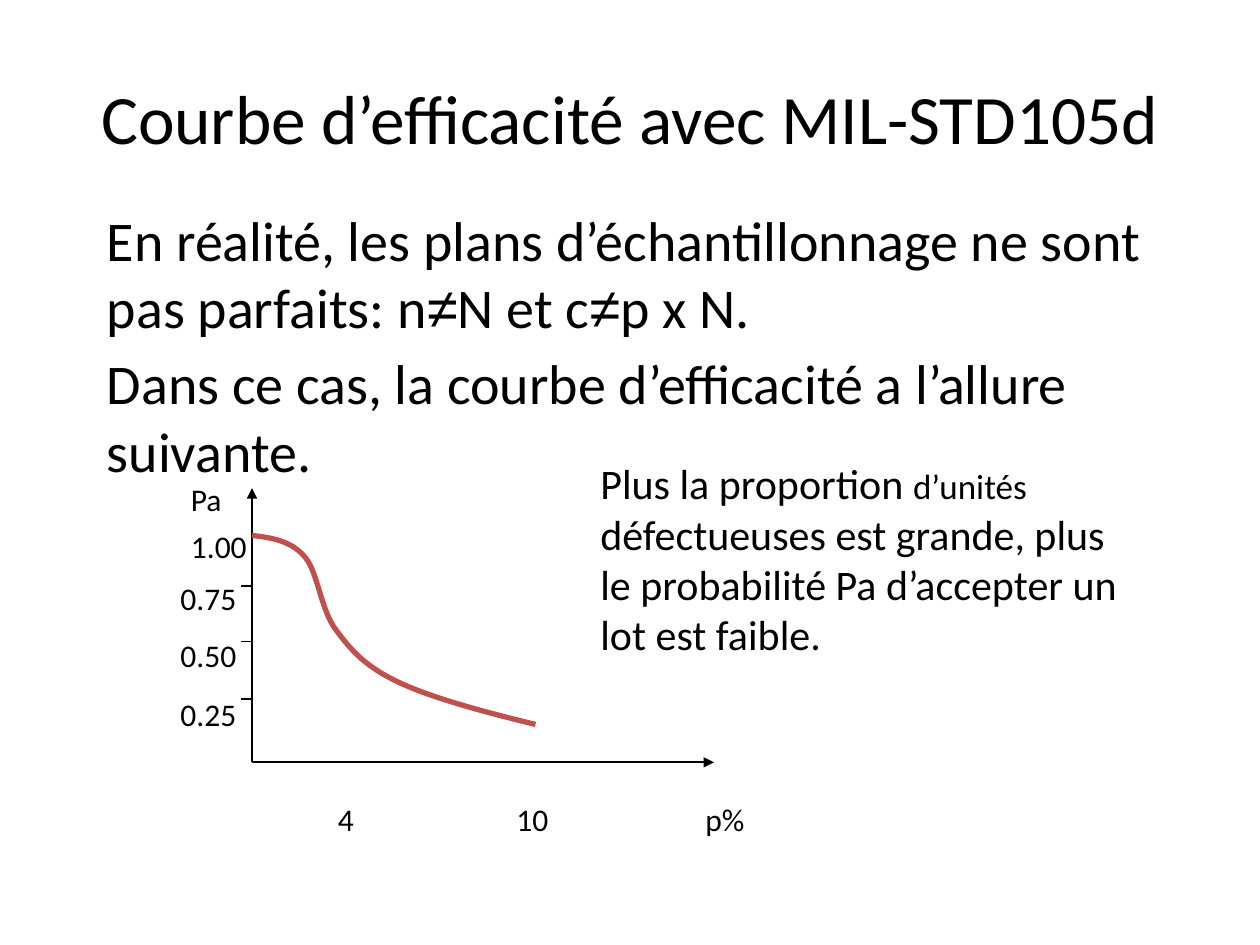
import lxml.etree
import pptx
import pptx.dml.color
import pptx.enum.shapes
import pptx.enum.text
import pptx.oxml.ns
import pptx.util

COLORS = {"ink": "000000", "curve": "C0504D"}
COLUMNS, ROWS = 120, 90
SUBDIVISIONS = 10  # freeform units per grid cell


class SlideBuilder:
    """Draws on one page; every length is in grid columns and rows."""

    def __init__(self, deck, font="Calibri"):
        self.page = deck.slides.add_slide(deck.slide_layouts[6])
        self.font = font
        self.column = deck.slide_width // COLUMNS
        self.row = deck.slide_height // ROWS

    def place(self, x, y):
        return round(x * self.column), round(y * self.row)

    def color(self, name):
        return pptx.dml.color.RGBColor.from_string(COLORS[name])

    def text(self, left, top, width, height, paragraphs, size=18,
             align="LEFT", anchor="TOP", before=0):
        """Each paragraph is a list of (words, font name, font size) spans; None inherits."""
        box = self.page.shapes.add_textbox(*self.place(left, top), *self.place(width, height))
        frame = box.text_frame
        frame.word_wrap = True
        frame.vertical_anchor = getattr(pptx.enum.text.MSO_ANCHOR, anchor)
        for index, spans in enumerate(paragraphs):
            para = frame.add_paragraph() if index else frame.paragraphs[0]
            para.alignment = getattr(pptx.enum.text.PP_ALIGN, align)
            para.space_before = pptx.util.Pt(before)
            para.font.name = self.font
            para.font.size = pptx.util.Pt(size)
            para.font.color.rgb = self.color("ink")
            for words, font, span_size in spans:
                span = para.add_run()
                span.text = words
                if font:
                    span.font.name = font
                if span_size:
                    span.font.size = pptx.util.Pt(span_size)

    def label(self, left, top, width, height, words):
        self.text(left, top, width, height, [[(words, None, None)]])

    def line(self, start, end, arrow=False):
        line = self.page.shapes.add_connector(
            pptx.enum.shapes.MSO_CONNECTOR.STRAIGHT, *self.place(*start), *self.place(*end))
        line.line.color.rgb = self.color("ink")
        line.line.width = pptx.util.Pt(1)
        if arrow:
            lxml.etree.SubElement(line.line._get_or_add_ln(),
                                  pptx.oxml.ns.qn("a:tailEnd"), type="triangle")
        lxml.etree.SubElement(line._element.spPr, pptx.oxml.ns.qn("a:effectLst"))

    def curve(self, start, segments):
        """Open Bézier curve; a segment is two control points and an end point."""
        def units(point):
            return [round(value * SUBDIVISIONS) for value in point]

        builder = self.page.shapes.build_freeform(
            *units(start), scale=self.column / SUBDIVISIONS)
        builder.add_line_segments([units(segment[-1]) for segment in segments], close=False)
        shape = builder.convert_to_shape()
        shape.shadow.inherit = False
        shape.fill.background()
        shape.line.color.rgb = self.color("curve")
        shape.line.width = pptx.util.Pt(3)
        origin_x, origin_y = units(start)
        for step, segment in zip(shape._element.xpath(".//a:lnTo"), segments):
            bezier = lxml.etree.Element(pptx.oxml.ns.qn("a:cubicBezTo"))
            for x, y in map(units, segment):
                lxml.etree.SubElement(bezier, pptx.oxml.ns.qn("a:pt"),
                                      x=str(x - origin_x), y=str(y - origin_y))
            step.getparent().replace(step, bezier)


def main():
    deck = pptx.Presentation()
    deck.slide_width, deck.slide_height = pptx.util.Inches(10), pptx.util.Inches(7.5)
    slide = SlideBuilder(deck)

    slide.text(6, 3.6, 108, 15, [[("Courbe d’efficacité avec MIL-STD105d", None, None)]],
               size=39.6, align="CENTER", anchor="MIDDLE")
    slide.text(9, 19, 102, 61, [
        [("En réalité, les plans d’échantillonnage ne sont pas parfaits: n", None, None),
         ("≠", "Arial", None), ("N et c", None, None),
         ("≠", "Arial", None), ("p x N.", None, None)],
        [("Dans ce cas, la courbe d’efficacité a l’allure suivante.", None, None)],
    ], size=32, before=5)

    origin = (24, 72.6)
    slide.line(origin, (24, 46.5), arrow=True)
    slide.line(origin, (68, 72.6), arrow=True)
    for left, width, words in [(31, 7, "4"), (48, 7, "10"), (66, 9, "p%")]:
        slide.label(left, 75.6, width, 4.4, words)
    for tick, top, words in [(66.6, 65.6, "0.25"), (61.1, 60, "0.50"), (55.8, 54.6, "0.75")]:
        slide.line((24, tick), (23, tick))
        slide.label(16, top, 8, 3.6, words)
    slide.label(17, 49.6, 8, 3.6, "1.00")
    slide.label(17, 45.1, 8, 4.4, "Pa")

    slide.curve((24, 51), [
        [(25.8, 51.2), (27.7, 51.5), (29, 53)],
        [(30.3, 54.5), (30.5, 58), (32, 60)],
        [(33.5, 62), (34.8, 63.5), (38, 65)],
        [(41.2, 66.5), (46.1, 67.8), (51, 69)],
    ])
    slide.text(56, 43, 53, 20.6, [[
        ("Plus la proportion ", None, None),
        ("d’unités", None, 20),
        (" défectueuses est grande, plus le probabilité Pa d’accepter un lot est faible.",
         None, None),
    ]], size=24)

    deck.save("out.pptx")


if __name__ == "__main__":
    main()
